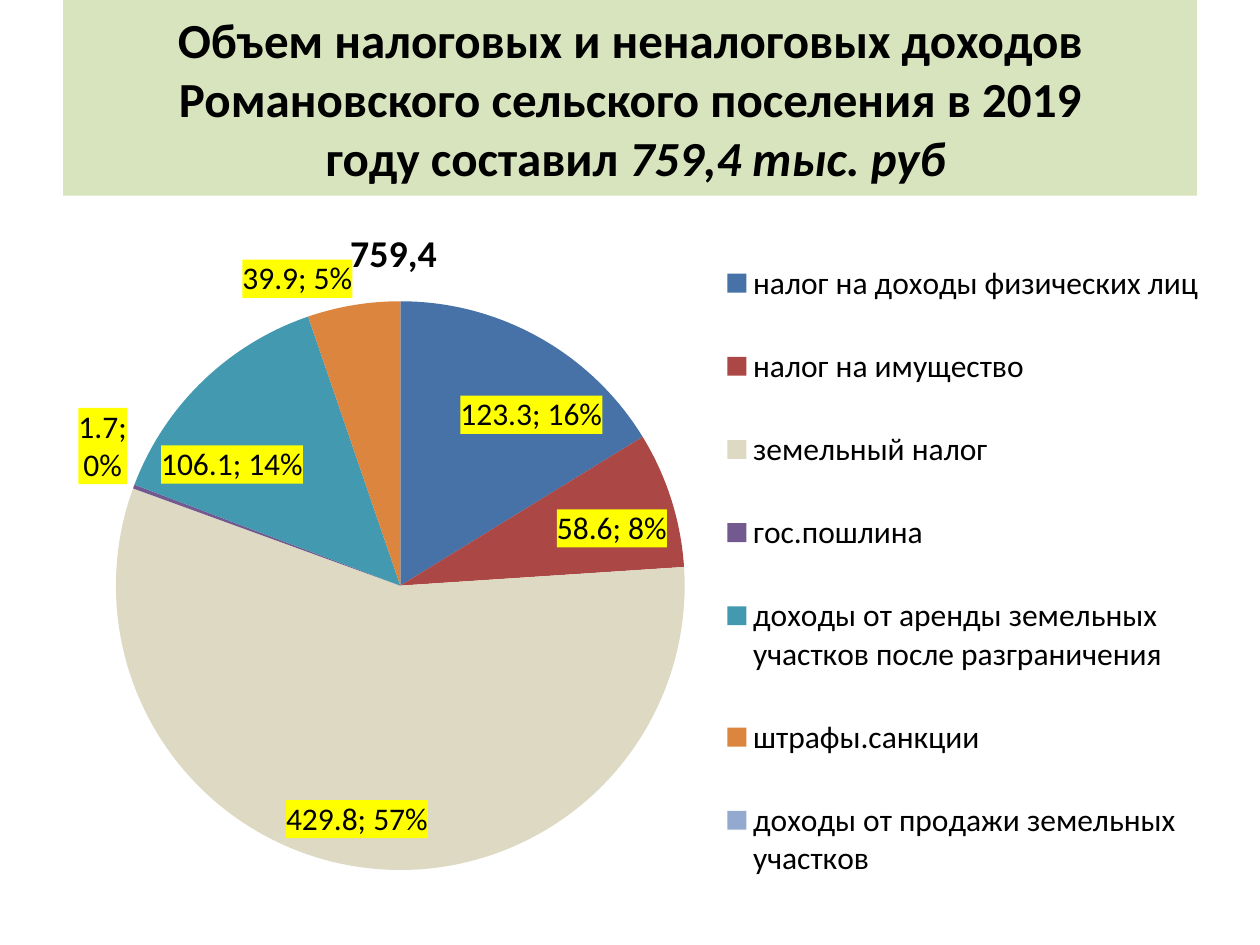
from lxml import etree
from pptx import Presentation, util as u
from pptx.chart.data import CategoryChartData
from pptx.dml.color import RGBColor
from pptx.enum import chart as ch, text
from pptx.oxml import parse_xml
from pptx.oxml.ns import nsdecls, qn

TITLE = [
    ("Объем налоговых и неналоговых доходов Романовского сельского поселения в 2019", False),
    None,
    (" году составил ", False),
    ("759,4 тыс. руб", True),
]
TOTAL = "759,4"
INCOME = [
    ("налог на доходы физических лиц", 123.3, "4672A8"),
    ("налог на имущество", 58.6, "AB4744"),
    ("земельный налог", 429.8, "DDD9C3"),
    ("гос.пошлина", 1.7, "725990"),
    ("доходы от аренды земельных участков после разграничения", 106.1, "4299B0"),
    ("штрафы.санкции", 39.9, "DC853E"),
    ("доходы от продажи земельных участков", 0, "93A9CF"),
]
COLORS = {"text": "000000", "band": "D7E4BD", "label": "FFFF00"}
FONT = "Calibri"
W, H = 10, 7.5
TITLE_BOX = (0.05, 0, 0.9, 0.207)
CHART_BOX = (0.055, 0.208, 0.906, 0.792)
PLOT = (0.02, 0.14, 0.54, 0.76)
LEGEND = (0.57, 0.03, 0.43, 0.94)
HEADING = (0.24, 0.03)


def place(box):
    return [u.Inches(share * side) for share, side in zip(box, (W, H, W, H))]


def style(font, size, **values):
    values = {"name": FONT, "size": u.Pt(size), "bold": False, **values}
    for key, value in values.items():
        setattr(font, key, value)
    font.color.rgb = RGBColor.from_string(COLORS["text"])


def set_layout(element, box, after, inner=False):
    for old in element.findall(qn("c:layout")):
        element.remove(old)
    parts = [("layoutTarget", "inner")] if inner else []
    parts += [("xMode", "edge"), ("yMode", "edge")] + list(zip("xywh", box))
    body = "".join(f'<c:{tag} val="{value}"/>' for tag, value in parts)
    layout = parse_xml(f'<c:layout {nsdecls("c")}><c:manualLayout>{body}</c:manualLayout></c:layout>')
    anchor = element.find(qn(after)) if after else None
    if anchor is None:
        element.insert(0, layout)
    else:
        anchor.addnext(layout)


def add_title(s):
    sp = s.shapes.title
    sp.left, sp.top, sp.width, sp.height = place(TITLE_BOX)
    sp.fill.solid()
    sp.fill.fore_color.rgb = RGBColor.from_string(COLORS["band"])
    tf = sp.text_frame
    tf.word_wrap = True
    tf.auto_size = text.MSO_AUTO_SIZE.NONE
    tf.vertical_anchor = text.MSO_ANCHOR.MIDDLE
    p = tf.paragraphs[0]
    p.alignment = text.PP_ALIGN.CENTER
    for part in TITLE:
        if part is None:
            p.add_line_break()
            continue
        r = p.add_run()
        r.text, italic = part
        style(r.font, 28, bold=True, italic=italic)


def format_labels(series):
    labels = series.data_labels
    style(labels.font, 18)
    for key in ("show_value", "show_percentage"):
        setattr(labels, key, True)
    labels.position = ch.XL_LABEL_POSITION.BEST_FIT
    dl = series._element.find(qn("c:dLbls"))
    dl.find(qn("c:txPr")).addprevious(parse_xml(
        f'<c:spPr {nsdecls("c", "a")}><a:solidFill><a:srgbClr val="{COLORS["label"]}"/>'
        "</a:solidFill></c:spPr>"))
    separator = etree.Element(qn("c:separator"))
    separator.text = "; "
    flags = [e for e in dl if e.tag.startswith(qn("c:show")) and e.tag != qn("c:showLeaderLines")]
    flags[-1].addnext(separator)
    empty = [i for i, (_, value, _) in enumerate(INCOME) if not value]
    for i in reversed(empty):
        dl.insert(0, parse_xml(
            f'<c:dLbl {nsdecls("c")}><c:idx val="{i}"/><c:delete val="1"/></c:dLbl>'))


def add_pie(s):
    data = CategoryChartData()
    data.categories = [name for name, _, _ in INCOME]
    data.add_series(TOTAL, [value for _, value, _ in INCOME])
    chart = s.shapes.add_chart(ch.XL_CHART_TYPE.PIE, *place(CHART_BOX), data).chart
    style(chart.font, 18)
    chart.has_title = True
    tf = chart.chart_title.text_frame
    tf.text = TOTAL
    style(tf.paragraphs[0].runs[0].font, 21.6, bold=True)
    chart.chart_title.include_in_layout = False
    chart.has_legend = True
    chart.legend.position = ch.XL_LEGEND_POSITION.RIGHT
    chart.legend.include_in_layout = False
    style(chart.legend.font, 18)
    plot = chart.plots[0]
    plot.vary_by_categories = True
    series = plot.series[0]
    for i, (_, _, color) in enumerate(INCOME):
        fill = series.points[i].format.fill
        fill.solid()
        fill.fore_color.rgb = RGBColor.from_string(color)
    format_labels(series)
    set_layout(chart.chart_title._element, HEADING, "c:tx")
    set_layout(chart.legend._element, LEGEND, "c:legendPos")
    set_layout(chart._chartSpace.chart.plotArea, PLOT, None, inner=True)


def main():
    prs = Presentation()
    prs.slide_width, prs.slide_height = u.Inches(W), u.Inches(H)
    s = prs.slides.add_slide(prs.slide_layouts[5])
    add_title(s)
    add_pie(s)
    prs.save("out.pptx")


if __name__ == "__main__":
    main()
